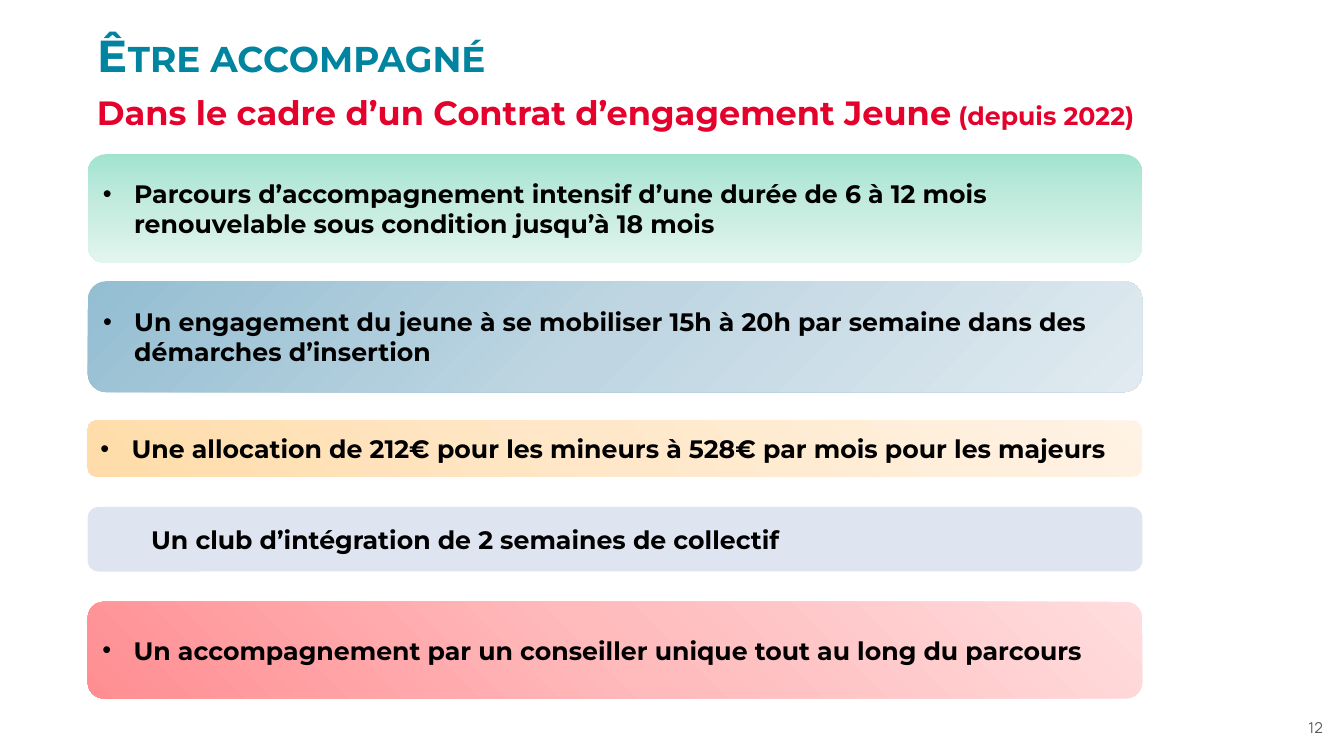
from lxml.etree import SubElement
from pptx import Presentation
from pptx.dml.color import RGBColor
from pptx.enum.shapes import MSO_SHAPE as Shape
from pptx.enum.text import MSO_ANCHOR as Anchor, MSO_AUTO_SIZE as AutoSize, PP_ALIGN as Align
from pptx.oxml.ns import qn
from pptx.util import Pt

TEAL = RGBColor(0x00, 0x84, 0x9F)
RED = RGBColor(0xE4, 0x02, 0x2C)
GREY = RGBColor(0x59, 0x59, 0x59)
BLACK = RGBColor(0x00, 0x00, 0x00)
LAVENDER = RGBColor(0xDE, 0xE5, 0xF0)
GREENS = RGBColor(0xA2, 0xE3, 0xD0), RGBColor(0xC6, 0xEC, 0xE0), RGBColor(0xE3, 0xF5, 0xEF)
BLUES = RGBColor(0x94, 0xBE, 0xD2), RGBColor(0xBF, 0xD6, 0xE2), RGBColor(0xE0, 0xEA, 0xF0)
ORANGES = RGBColor(0xFF, 0xDC, 0xA9), RGBColor(0xFF, 0xE8, 0xCA), RGBColor(0xFF, 0xF3, 0xE5)
PINKS = RGBColor(0xFF, 0x8E, 0x92), RGBColor(0xFF, 0xBA, 0xBC), RGBColor(0xFF, 0xDD, 0xDE)

PX = 9144
CARD_LEFT, CARD_WIDTH = 87, 1046
CARDS = [
    (153, 108, GREENS, 90,
     "Parcours d’accompagnement intensif d’une durée de 6 à 12 mois renouvelable sous condition jusqu’à 18 mois"),
    (279, 110, BLUES, 45,
     "Un engagement du jeune à se mobiliser 15h à 20h par semaine dans des démarches d’insertion"),
    (417, 56, ORANGES, None,
     "Une allocation de 212€ pour les mineurs à 528€ par mois pour les majeurs"),
    (503, 64, LAVENDER, None, "Un club d’intégration de 2 semaines de collectif"),
    (597, 96, PINKS, None,
     "Un accompagnement par un conseiller unique tout au long du parcours"),
]


class Deck:
    heading_font = "Montserrat"
    number_font = "Manrope"

    def __init__(self, width, height):
        self.prs = Presentation()
        self.prs.slide_width, self.prs.slide_height = width * PX, height * PX
        self.slide = self.prs.slides.add_slide(self.prs.slide_layouts[5])

    def style(self, r, size, color, bold=True, name=None):
        r.font.name = name or self.heading_font
        r.font.size = Pt(size)
        r.font.bold = bold
        r.font.color.rgb = color

    def title(self, text, *box):
        sp = self.slide.shapes.title
        sp.left, sp.top, sp.width, sp.height = (n * PX for n in box)
        tf = sp.text_frame
        tf.text = text
        tf.auto_size = AutoSize.NONE
        tf.vertical_anchor = Anchor.MIDDLE
        p = tf.paragraphs[0]
        p.alignment = Align.LEFT
        p.line_spacing = 0.9
        r = p.runs[0]
        self.style(r, 32, TEAL)
        r.font._element.set("cap", "small")

    def text(self, runs, box, inset, align, anchor=Anchor.TOP):
        sp = self.slide.shapes.add_textbox(*(n * PX for n in box))
        tf = sp.text_frame
        tf.word_wrap = True
        tf.vertical_anchor = anchor
        tf.margin_left = tf.margin_right = tf.margin_top = tf.margin_bottom = inset * PX
        p = tf.paragraphs[0]
        p.alignment = align
        for text, *look in runs:
            r = p.add_run()
            r.text = text
            self.style(r, *look)

    def gradient(self, sp, colors, angle):
        sp.fill.gradient()
        grad = sp._element.spPr.find(qn("a:gradFill"))
        for child in list(grad):
            grad.remove(child)
        stops = SubElement(grad, qn("a:gsLst"))
        for i, color in enumerate(colors):
            stop = SubElement(stops, qn("a:gs"), pos=str(i * 50000))
            SubElement(stop, qn("a:srgbClr"), val=str(color))
        if angle is None:
            circle = SubElement(grad, qn("a:path"), path="circle")
            SubElement(circle, qn("a:fillToRect"), t="100000", r="100000")
        else:
            SubElement(grad, qn("a:lin"), ang=str(angle * 60000), scaled="0")

    def card(self, top, height, colors, angle, text):
        sp = self.slide.shapes.add_shape(
            Shape.ROUNDED_RECTANGLE, CARD_LEFT * PX, top * PX, CARD_WIDTH * PX, height * PX)
        sp.shadow.inherit = False
        sp.line.fill.background()
        tf = sp.text_frame
        tf.word_wrap = True
        tf.vertical_anchor = Anchor.MIDDLE
        tf.text = text
        p = tf.paragraphs[0]
        p.alignment = Align.LEFT
        pPr = p._p.get_or_add_pPr()
        if isinstance(colors, RGBColor):
            sp.fill.solid()
            sp.fill.fore_color.rgb = colors
            p.level = 1
            pPr.set("marL", str(50 * PX))
            pPr.set("indent", "0")
        else:
            self.gradient(sp, colors, angle)
            pPr.set("marL", str(31 * PX))
            pPr.set("indent", str(-31 * PX))
            SubElement(pPr, qn("a:buFont"), typeface="Arial")
            SubElement(pPr, qn("a:buChar"), char="•")
        self.style(p.runs[0], 18, BLACK)


def main():
    deck = Deck(1333, 750)
    deck.title("Être accompagné", 87, 18, 614, 80)
    deck.text([("Dans le cadre d’un Contrat d’engagement Jeune", 24, RED),
               (" (depuis 2022)", 18, RED)], (50, 81, 1121, 57), 10, Align.CENTER)
    for card in CARDS:
        deck.card(*card)
    deck.text([("12", 10.7, GREY, False, deck.number_font)],
              (1245, 693, 80, 57), 13, Align.RIGHT, Anchor.MIDDLE)
    deck.prs.save("out.pptx")


if __name__ == "__main__":
    main()
